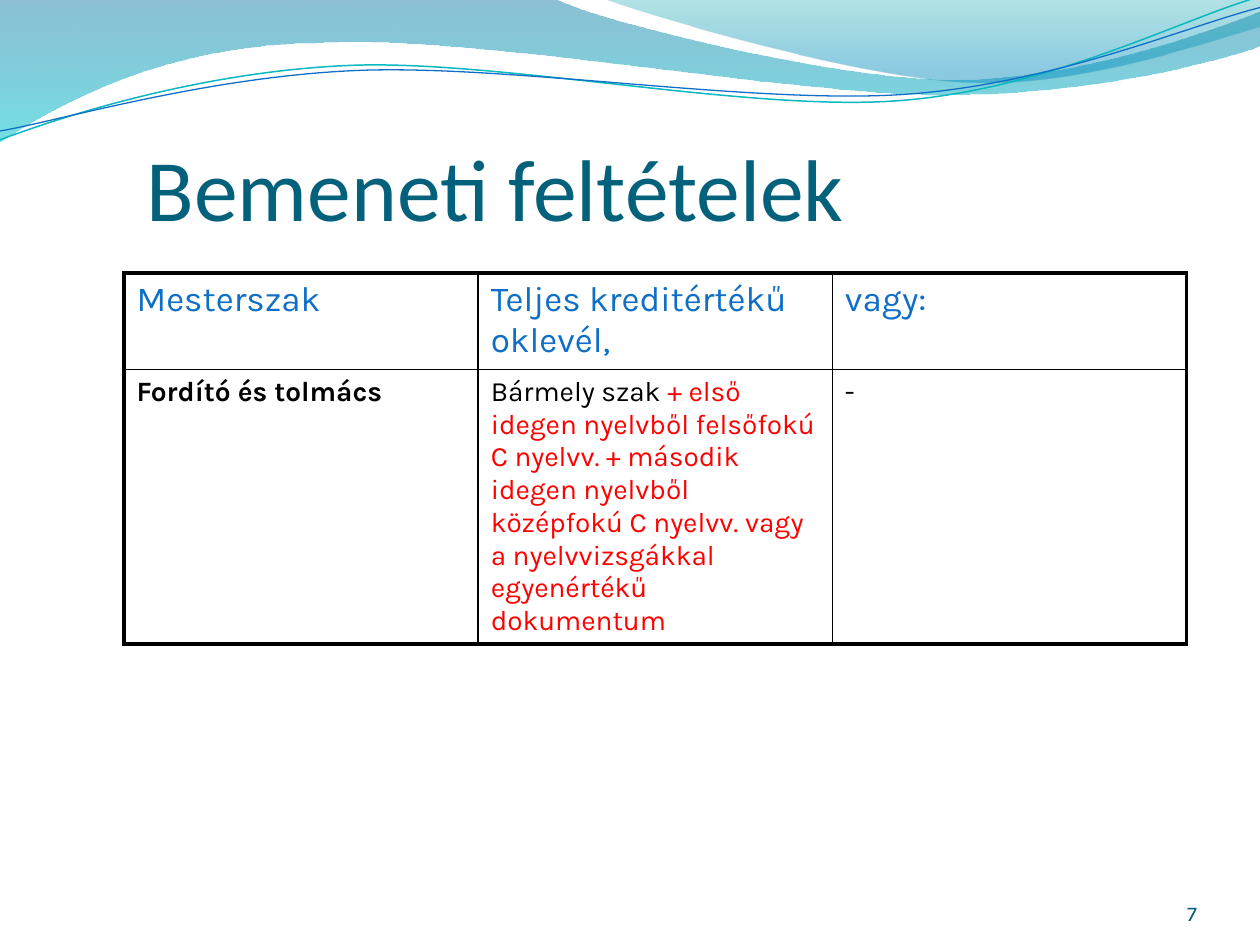
from dataclasses import dataclass

from lxml import etree
from pptx import Presentation
from pptx.dml.color import RGBColor
from pptx.enum.text import MSO_ANCHOR, PP_ALIGN
from pptx.oxml.ns import qn
from pptx.util import Cm, Pt

BOTTOM, LEFT, RIGHT = MSO_ANCHOR.BOTTOM, PP_ALIGN.LEFT, PP_ALIGN.RIGHT
UNIT = 2.54  # cm per unit of the wave points


@dataclass(frozen=True)
class Theme:
    head: str = "Calibri"
    body: str = "Karla"
    title: str = "04617B"
    number: str = "045C75"
    blue: str = "0F6FC6"
    teal: str = "0AB8BF"
    black: str = "000000"
    red: str = "FF0000"
    title_size: int = 50
    top_size: int = 20
    cell_size: int = 16
    small_size: int = 12
    thin: float = 1
    thick: float = 2.25


THEME = Theme()

# A pair is a line to a point; six numbers are a Bézier curve.
BANDS = [
    ([(0, -0.01), (4.4, -0.01), (4.76, 0.17, 6.64, 0.63, 7.58, 0.63),
      (8.53, 0.63, 9.58, 0.26, 10, 0.09), (10.01, 0.36),
      (9.83, 0.44, 8.7, 0.76, 7.46, 0.75),
      (6.22, 0.75, 3.82, 0.28, 2.57, 0.34),
      (1.29, 0.35, 0.46, 0.83, -0.01, 1.13), (0, -0.01)],
     [(0, "0074A1", 45), (1, "00C6CF", 55)]),
    ([(4.79, -0.01), (5.09, 0.11, 6.82, 0.62, 7.69, 0.65),
      (8.56, 0.69, 9.61, 0.32, 10, 0.21), (10, 0), (4.79, -0.01)],
     [(0, "00A1A9", 30), (0.8, "008BBF", 45)]),
]
WAVES = [
    ([(0, 1.11), (0.48, 0.93, 1.58, 0.57, 2.77, 0.52),
      (3.95, 0.47, 5.93, 0.89, 7.13, 0.8),
      (8.33, 0.71, 9.38, 0.15, 9.98, -0.02)], THEME.teal, 0.85),
    ([(0, 1.04), (0.47, 0.96, 1.64, 0.61, 2.83, 0.56),
      (4.03, 0.51, 5.97, 0.83, 7.17, 0.75),
      (8.36, 0.67, 9.41, 0.21, 10, 0.06)], THEME.blue, 0.75),
]

ROWS = [
    [[(text, THEME.blue)] for text in
     ("Mesterszak", "Teljes kreditértékű oklevél,", "vagy:")],
    [[("Fordító és tolmács", THEME.black)],
     [("Bármely szak ", THEME.black),
      ("+ első idegen nyelvből felsőfokú C nyelvv. + második idegen nyelvből "
       "középfokú C nyelvv. vagy a nyelvvizsgákkal egyenértékű dokumentum",
       THEME.red)],
     [("-", THEME.black)]],
]


def style(font, name, size, color, bold=False):
    font.name, font.size, font.bold = name, Pt(size), bold
    font.color.rgb = RGBColor.from_string(color)


def add_path(slide, path, close):
    """Build the outline from straight legs, then join legs into curves."""
    first, *rest = [(Cm(part[i] * UNIT), Cm(part[i + 1] * UNIT))
                    for part in path for i in range(0, len(part), 2)]
    pen = slide.shapes.build_freeform(*first)
    pen.add_line_segments(rest, close=close)
    shape = pen.convert_to_shape()
    shape.shadow.inherit = False
    legs = iter(list(shape._element.spPr.iter(qn("a:lnTo"))))
    for part in path[1:]:
        leg = next(legs)
        if len(part) == 6:
            curve = etree.Element(qn("a:cubicBezTo"))
            leg.addprevious(curve)
            for old in (leg, next(legs), next(legs)):
                curve.append(old[0])
                old.getparent().remove(old)
    return shape


def add_band(slide, path, stops):
    shape = add_path(slide, path, True)
    shape.line.fill.background()
    shape.fill.gradient()
    shape.fill.gradient_angle = 270
    for stop, (place, color, _) in zip(shape.fill.gradient_stops, stops):
        stop.position = place
        stop.color.rgb = RGBColor.from_string(color)
    tones = shape._element.spPr.iter(qn("a:srgbClr"))
    for tone, (_, _, alpha) in zip(tones, stops):
        etree.SubElement(tone, qn("a:alpha"), val=str(alpha * 1000))


def add_wave(slide, path, color, width):
    shape = add_path(slide, path, False)
    shape.fill.background()
    shape.line.color.rgb = RGBColor.from_string(color)
    shape.line.width = Pt(width)


def set_title(slide, text):
    title = slide.shapes.title
    title.left, title.top = Cm(2.96), Cm(0.83)
    title.width, title.height = Cm(20.96), Cm(3.98)
    frame = title.text_frame
    frame.text = text
    frame.vertical_anchor = BOTTOM
    frame.margin_left = frame.margin_right = frame.margin_bottom = 0
    line = frame.paragraphs[0]
    line.alignment = LEFT
    style(line.runs[0].font, THEME.head, THEME.title_size, THEME.title)
    slide.shapes._spTree.append(title._element)  # in front of the waves


def set_edges(cell, outer):
    """Draw the four borders, thick where the side is an outer one."""
    props = cell._tc.get_or_add_tcPr()
    for side in "LRTB":
        width = THEME.thick if side in outer else THEME.thin
        line = etree.SubElement(props, qn("a:ln" + side), w=str(Pt(width)))
        fill = etree.SubElement(line, qn("a:solidFill"))
        etree.SubElement(fill, qn("a:srgbClr"), val=THEME.black)


def add_grid(slide):
    count, wide = len(ROWS[0]), Cm(7.14)
    heights = Cm(1.95), Cm(5)
    table = slide.shapes.add_table(len(ROWS), count, Cm(2.5), Cm(5.5),
                                   wide * count, sum(heights)).table
    table.first_row = table.horz_banding = False
    for col in table.columns:
        col.width = wide
    for r, (row, high) in enumerate(zip(ROWS, heights)):
        table.rows[r].height = high
        for c, parts in enumerate(row):
            cell = table.cell(r, c)
            sides = {"L": c == 0, "R": c == count - 1,
                     "T": r == 0, "B": r == len(ROWS) - 1}
            set_edges(cell, [side for side, outer in sides.items() if outer])
            cell.fill.background()
            line = cell.text_frame.paragraphs[0]
            for text, color in parts:
                run = line.add_run()
                run.text = text
                style(run.font, THEME.body,
                      THEME.cell_size if r else THEME.top_size,
                      color, r == 1 and c == 0)


def add_number(slide, text):
    box = slide.shapes.add_textbox(Cm(22.02), Cm(17.65), Cm(2.11), Cm(1.02))
    frame = box.text_frame
    frame.text = text
    frame.word_wrap = True
    frame.vertical_anchor = BOTTOM
    frame.margin_left = frame.margin_right = 0
    frame.margin_top = frame.margin_bottom = 0
    line = frame.paragraphs[0]
    line.alignment = RIGHT
    style(line.runs[0].font, THEME.body, THEME.small_size, THEME.number)


def main():
    deck = Presentation()
    deck.slide_width, deck.slide_height = Cm(25.4), Cm(19.05)
    slide = deck.slides.add_slide(deck.slide_layouts[5])
    for band in BANDS:
        add_band(slide, *band)
    for wave in WAVES:
        add_wave(slide, *wave)
    set_title(slide, "Bemeneti feltételek")
    add_grid(slide)
    add_number(slide, "7")
    deck.save("out.pptx")


if __name__ == "__main__":
    main()
